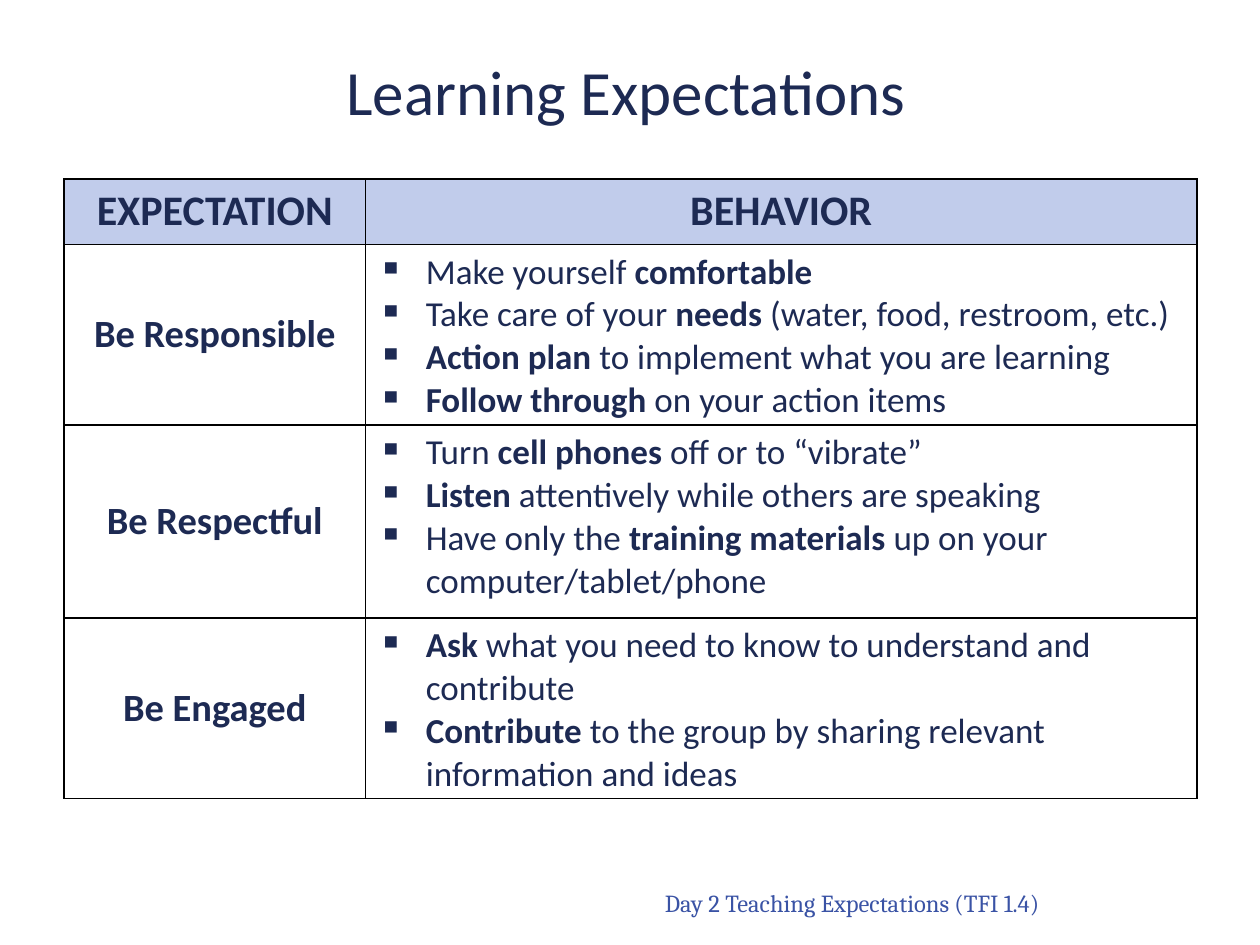
from dataclasses import dataclass

import pptx
import pptx.dml.color
import pptx.enum.text
import pptx.oxml
import pptx.oxml.ns
import pptx.util
from pptx.util import Inches

ALIGN = pptx.enum.text.PP_ALIGN
ANCHOR = pptx.enum.text.MSO_ANCHOR
NAMESPACE = pptx.oxml.ns.nsdecls("a")


@dataclass(frozen=True)
class Theme:
    ink: str = "1D2A53"
    footer_ink: str = "3A53A5"
    header_fill: str = "C1CCEB"
    body_fill: str = "FFFFFF"
    border: str = "000000"
    font: str = "Calibri"
    footer_font: str = "Cambria"
    title_size: int = 36
    header_size: int = 24
    label_size: int = 22
    body_size: int = 20
    footer_size: int = 14


THEME = Theme()
HEADINGS = ("EXPECTATION", "BEHAVIOR")
EXPECTATIONS = [
    ("Be Responsible", [
        "Make yourself *comfortable*",
        "Take care of your *needs* (water, food, restroom, etc.)",
        "*Action plan *to implement what you are learning",
        "*Follow through *on your action items",
    ]),
    ("Be Respectful", [
        "Turn *cell phones* off or to “vibrate”",
        "*Listen *attentively while others are speaking",
        "Have only the *training materials *up on your computer/tablet/phone",
    ]),
    ("Be Engaged", [
        "*Ask* what you need to know to understand and contribute",
        "*Contribute *to the group by sharing relevant information and ideas",
    ]),
]
COLUMN_WIDTHS = (2.39, 6.6)
ROW_HEIGHTS = (0.52, 1.37, 1.53, 1.37)


def style_span(span, size, bold=False, color=THEME.ink, font=THEME.font):
    span.font.name = font
    span.font.size = pptx.util.Pt(size)
    span.font.bold = bold
    span.font.color.rgb = pptx.dml.color.RGBColor.from_string(color)


def write_line(frame, text, align, size, **style):
    frame.text = text
    para = frame.paragraphs[0]
    para.alignment = align
    style_span(para.runs[0], size, **style)


def write_bullets(frame, items):
    for index, item in enumerate(items):
        para = frame.paragraphs[0] if index == 0 else frame.add_paragraph()
        para.alignment = ALIGN.LEFT
        properties = para._p.get_or_add_pPr()
        properties.set("marL", str(Inches(0.38)))
        properties.set("indent", str(-Inches(0.38)))
        for xml in (
            f'<a:buClr {NAMESPACE}><a:srgbClr val="{THEME.ink}"/></a:buClr>',
            f'<a:buChar {NAMESPACE} char="▪"/>',
        ):
            properties.append(pptx.oxml.parse_xml(xml))
        for position, piece in enumerate(item.split("*")):
            if piece:
                span = para.add_run()
                span.text = piece
                style_span(span, THEME.body_size, bold=position % 2 == 1)


def style_cell(cell, fill):
    properties = cell._tc.get_or_add_tcPr()
    for side in ("lnL", "lnR", "lnT", "lnB"):
        properties.append(pptx.oxml.parse_xml(
            f'<a:{side} {NAMESPACE} w="{pptx.util.Pt(1)}"><a:solidFill>'
            f'<a:srgbClr val="{THEME.border}"/></a:solidFill></a:{side}>'))
    cell.fill.solid()
    cell.fill.fore_color.rgb = pptx.dml.color.RGBColor.from_string(fill)


def add_text_region(page, box, text, anchor, align, size, **style):
    shape = page.shapes.add_textbox(*map(Inches, box))
    frame = shape.text_frame
    frame.word_wrap = True
    frame.vertical_anchor = anchor
    write_line(frame, text, align, size, **style)


def add_expectations_table(page, box):
    rows = len(EXPECTATIONS) + 1
    shape = page.shapes.add_table(rows, len(HEADINGS), *map(Inches, box))
    table = shape.table
    table.first_row = False
    table.horz_banding = False
    for column, width in zip(table.columns, COLUMN_WIDTHS):
        column.width = Inches(width)
    for row, height in zip(table.rows, ROW_HEIGHTS):
        row.height = Inches(height)

    for index, heading in enumerate(HEADINGS):
        cell = table.cell(0, index)
        style_cell(cell, THEME.header_fill)
        write_line(cell.text_frame, heading, ALIGN.CENTER, THEME.header_size, bold=True)

    for index, (label, behaviors) in enumerate(EXPECTATIONS, start=1):
        label_cell, behavior_cell = table.cell(index, 0), table.cell(index, 1)
        style_cell(label_cell, THEME.body_fill)
        style_cell(behavior_cell, THEME.body_fill)
        label_cell.vertical_anchor = ANCHOR.MIDDLE
        write_line(label_cell.text_frame, label, ALIGN.CENTER, THEME.label_size, bold=True)
        write_bullets(behavior_cell.text_frame, behaviors)


def main():
    deck = pptx.Presentation()
    deck.slide_width = Inches(10)
    deck.slide_height = Inches(7.5)
    page = deck.slides.add_slide(deck.slide_layouts[6])
    add_text_region(page, (3.63, 6.69, 4.72, 0.64), "Day 2 Teaching Expectations (TFI 1.4)",
                    ANCHOR.BOTTOM, ALIGN.RIGHT, THEME.footer_size,
                    color=THEME.footer_ink, font=THEME.footer_font)
    add_text_region(page, (0.51, 0.38, 8.92, 0.68), "Learning Expectations",
                    ANCHOR.MIDDLE, ALIGN.CENTER, THEME.title_size)
    add_expectations_table(page, (0.51, 1.42, sum(COLUMN_WIDTHS), sum(ROW_HEIGHTS)))
    deck.save("out.pptx")


if __name__ == "__main__":
    main()
